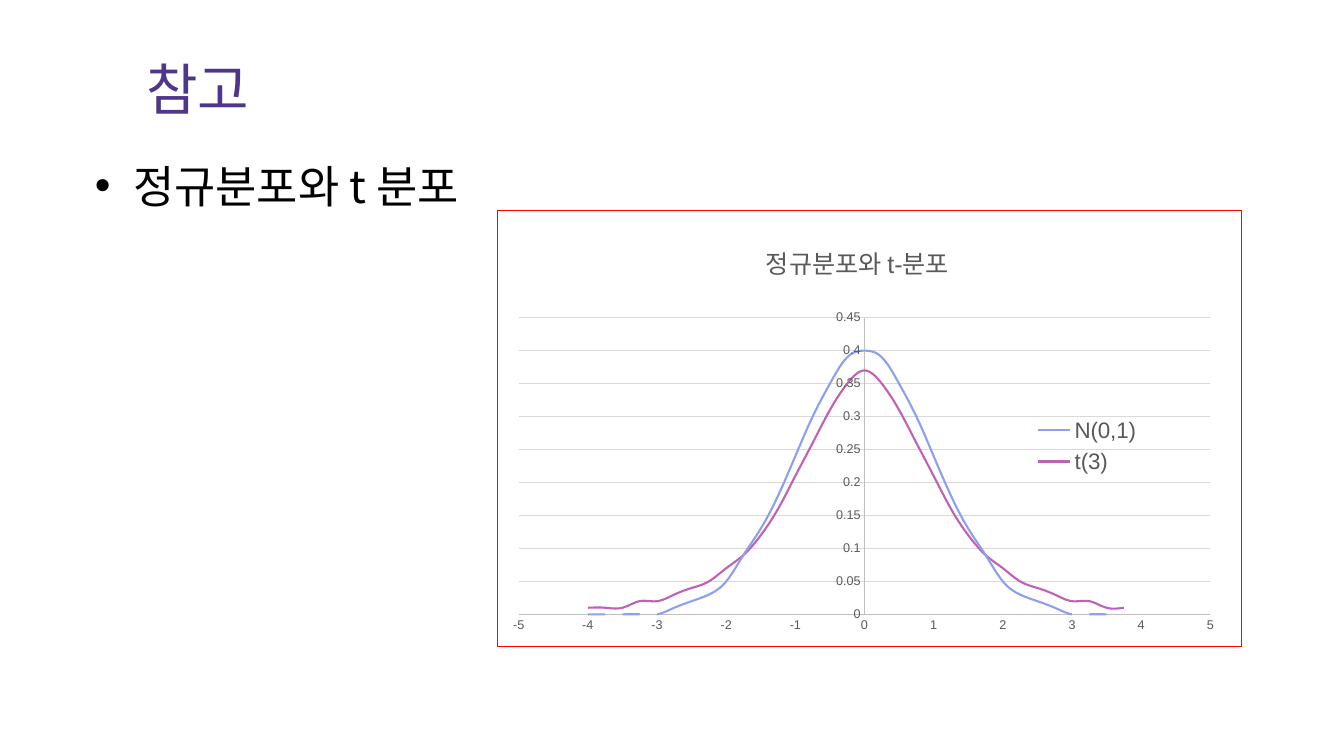
"""Build a slide that compares the normal and t distributions."""
import math

from lxml import etree
from pptx import Presentation
from pptx import util as u
from pptx.chart.data import XyChartData
from pptx.dml.color import RGBColor
from pptx.enum import chart as ch, text
from pptx.oxml import parse_xml
from pptx.oxml.ns import nsdecls, qn

HEADING = "참고"
TOPIC = "정규분포와 t 분포"
CHART_TITLE = "정규분포와 t-분포"
KOREAN, LATIN = "Noto Sans CJK KR", "Arial"
COLORS = {"heading": "4E368A", "topic": "000000", "label": "595959",
          "axis": "BFBFBF", "grid": "D9D9D9", "border": "FF0000"}
CURVES = [
    ("N(0,1)", "8DA0EF", lambda x: math.exp(-x * x / 2) / math.sqrt(2 * math.pi)),
    ("t(3)", "BF61B4", lambda x: 6 * math.sqrt(3) / (math.pi * (3 + x * x) ** 2)),
]
X_VALUES = [step / 4 for step in range(-16, 16)]
HEADING_BOX = (1.35, 0.39, 9.97, 0.97)
TOPIC_BOX = (0.84, 1.52, 11.61, 5.33)
CHART_BOX = (4.93, 2.08, 7.39, 4.34)
PLOT_BOX = {"x": 0.21, "y": 1.07, "w": 6.87, "h": 2.95}
TITLE_BOX = {"x": 2.62, "y": 0.26}
LEGEND_BOX = {"x": 5.3, "y": 2, "w": 1.11, "h": 0.69}


def style_font(font, size, color, face):
    font.size, font.name, font.bold = u.Pt(size), face, False
    font.color.rgb = RGBColor.from_string(COLORS[color])


def style_line(line, color, width=0.75):
    line.color.rgb = RGBColor.from_string(color)
    line.width = u.Pt(width)


def fill_placeholder(holder, box, words, size, color, anchor):
    holder.left, holder.top, holder.width, holder.height = map(u.Inches, box)
    frame = holder.text_frame
    frame.text = words
    frame.auto_size = text.MSO_AUTO_SIZE.NONE
    frame.vertical_anchor = anchor
    paragraph = frame.paragraphs[0]
    paragraph.alignment = text.PP_ALIGN.LEFT
    style_font(paragraph.font, size, color, KOREAN)
    set_east_asian(paragraph)
    return paragraph


def set_east_asian(paragraph):
    latin = paragraph.font._element.find(qn("a:latin"))
    latin.addnext(parse_xml(f'<a:ea {nsdecls("a")} typeface="{KOREAN}"/>'))


def place(part, index, box, inner=False):
    for old in part.findall(qn("c:layout")):
        part.remove(old)
    layout = etree.Element(qn("c:layout"))
    manual = etree.SubElement(layout, qn("c:manualLayout"))
    width, height = CHART_BOX[2:]
    settings = [("layoutTarget", "inner")] if inner else []
    settings += [("xMode", "edge"), ("yMode", "edge")]
    settings += [(side, length / (width if side in "xw" else height))
                 for side, length in box.items()]
    for tag, value in settings:
        etree.SubElement(manual, qn(f"c:{tag}")).set("val", str(value))
    part.insert(index, layout)


def add_curves(slide):
    data = XyChartData()
    for name, _, density in CURVES:
        series = data.add_series(name)
        for x in X_VALUES:
            series.add_data_point(x, round(density(x), 2))
    chart = slide.shapes.add_chart(ch.XL_CHART_TYPE.XY_SCATTER_SMOOTH_NO_MARKERS,
                                   *map(u.Inches, CHART_BOX), data).chart
    style_font(chart.font, 10, "topic", LATIN)
    for series, (_, color, _) in zip(chart.plots[0].series, CURVES):
        style_line(series.format.line, color, 1.5)
        series.marker.style = ch.XL_MARKER_STYLE.NONE
        for old in series._element.findall(qn("c:smooth")):
            series._element.remove(old)
        etree.SubElement(series._element, qn("c:smooth")).set("val", "1")

    scales = [(chart.category_axis, -5, 5, 1), (chart.value_axis, 0, 0.45, 0.05)]
    for axis, low, high, step in scales:
        axis.minimum_scale, axis.maximum_scale, axis.major_unit = low, high, step
        axis.major_tick_mark = axis.minor_tick_mark = ch.XL_TICK_MARK.NONE
        axis.tick_labels.number_format = "General"
        axis.tick_labels.number_format_is_linked = False
        style_font(axis.tick_labels.font, 9, "label", LATIN)
        style_line(axis.format.line, COLORS["axis"])
    chart.category_axis.has_major_gridlines = False
    chart.value_axis.has_major_gridlines = True
    style_line(chart.value_axis.major_gridlines.format.line, COLORS["grid"])

    chart.has_title = True
    chart.chart_title.text_frame.text = CHART_TITLE
    caption = chart.chart_title.text_frame.paragraphs[0]
    style_font(caption.font, 18, "label", LATIN)
    set_east_asian(caption)
    chart.has_legend = True
    chart.legend.position = ch.XL_LEGEND_POSITION.RIGHT
    chart.legend.include_in_layout = False
    style_font(chart.legend.font, 16, "label", LATIN)

    body = chart.element.find(qn("c:chart"))
    place(body.find(qn("c:plotArea")), 0, PLOT_BOX, inner=True)
    place(body.find(qn("c:title")), 1, TITLE_BOX)
    place(body.find(qn("c:legend")), 1, LEGEND_BOX)
    body.addnext(parse_xml(
        f'<c:spPr {nsdecls("c", "a")}><a:noFill/><a:ln w="{u.Pt(0.75)}"><a:solidFill>'
        f'<a:srgbClr val="{COLORS["border"]}"/></a:solidFill></a:ln></c:spPr>'))


def main():
    deck = Presentation()
    deck.slide_width, deck.slide_height = u.Inches(13.33), u.Inches(7.5)
    slide = deck.slides.add_slide(deck.slide_layouts[1])
    fill_placeholder(slide.shapes.title, HEADING_BOX, HEADING, 40, "heading",
                     text.MSO_ANCHOR.MIDDLE)
    topic = fill_placeholder(slide.placeholders[1], TOPIC_BOX, TOPIC, 32, "topic",
                             text.MSO_ANCHOR.TOP)
    indent = topic._p.get_or_add_pPr()
    indent.set("marL", str(u.Inches(0.38)))
    indent.set("indent", str(-u.Inches(0.38)))
    add_curves(slide)
    deck.save("out.pptx")


if __name__ == "__main__":
    main()
